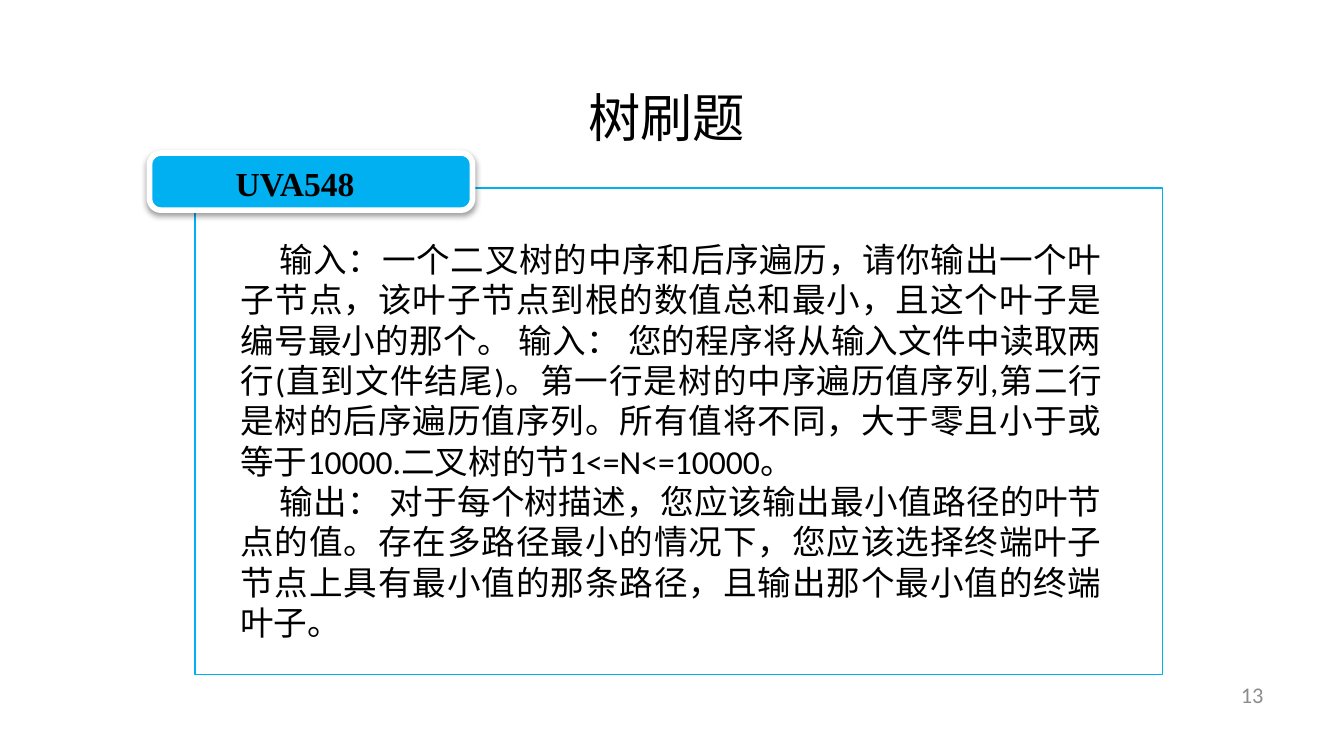
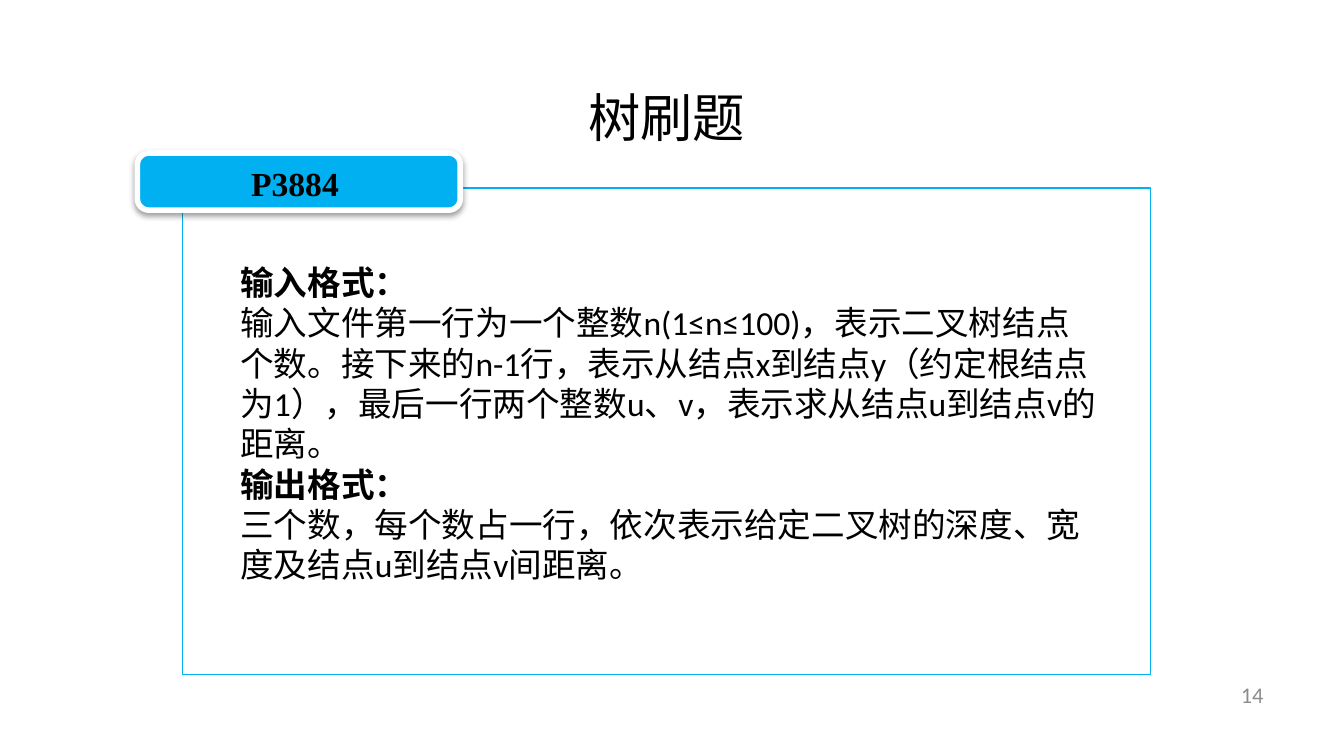
import lxml.etree
import pptx
import pptx.dml.color
import pptx.enum.shapes
import pptx.enum.text
import pptx.oxml.ns
import pptx.util

Pt = pptx.util.Pt
qn = pptx.oxml.ns.qn
ALIGN = pptx.enum.text.PP_ALIGN
ANCHOR = pptx.enum.text.MSO_ANCHOR
FIT = pptx.enum.text.MSO_AUTO_SIZE
SHAPES = pptx.enum.shapes.MSO_SHAPE

COLORS = {"accent": "00B0F0", "paper": "FFFFFF", "ink": "000000", "number": "8C8C8C"}
HAN_FONT = "Noto Sans CJK SC"
STYLES = {
    "title": {"size": Pt(28), "name": HAN_FONT, "bold": False},
    "label": {"size": Pt(18), "name": "Times New Roman", "bold": True},
    "body": {"size": Pt(18), "name": "Calibri", "bold": False},
    "heading": {"size": Pt(18), "name": "Calibri", "bold": True},
    "number": {"size": Pt(12), "name": "Calibri", "bold": False},
}
TITLE_ONLY = 5

PROBLEMS = [
    {
        "label": "UVA548",
        "number": 13,
        "card_left": 104.4,
        "text_top": 124.56,
        "text_height": 225.36,
        "align": ALIGN.JUSTIFY,
        "indent": 20.9,
        "paragraphs": [
            ("body", "输入：一个二叉树的中序和后序遍历，请你输出一个叶子节点，该叶子节点到根的数值总和最小，且这个叶子是编号最小的那个。 输入： 您的程序将从输入文件中读取两行(直到文件结尾)。第一行是树的中序遍历值序列,第二行是树的后序遍历值序列。所有值将不同，大于零且小于或等于10000.二叉树的节1<=N<=10000。"),
            ("body", "输出： 对于每个树描述，您应该输出最小值路径的叶节点的值。存在多路径最小的情况下，您应该选择终端叶子节点上具有最小值的那条路径，且输出那个最小值的终端叶子。"),
        ],
    },
    {
        "label": "P3884",
        "number": 14,
        "card_left": 97.9,
        "text_top": 136.8,
        "text_height": 203.76,
        "align": ALIGN.LEFT,
        "indent": 0,
        "paragraphs": [
            ("heading", "输入格式："),
            ("body", "输入文件第一行为一个整数n(1≤n≤100)，表示二叉树结点个数。接下来的n-1行，表示从结点x到结点y（约定根结点为1），最后一行两个整数u、v，表示求从结点u到结点v的距离。"),
            ("heading", "输出格式："),
            ("body", "三个数，每个数占一行，依次表示给定二叉树的深度、宽度及结点u到结点v间距离。"),
        ],
    },
]


def rgb(color):
    return pptx.dml.color.RGBColor.from_string(COLORS[color])


def add_xml(parent, tag, **attributes):
    return lxml.etree.SubElement(parent, qn(tag), attributes)


class Deck:
    def __init__(self):
        self.presentation = pptx.Presentation()
        self.presentation.slide_width = Pt(720)
        self.presentation.slide_height = Pt(405)
        self.slide = None

    def start_slide(self):
        layout = self.presentation.slide_layouts[TITLE_ONLY]
        self.slide = self.presentation.slides.add_slide(layout)

    def add_run(self, paragraph, text, style, color="ink"):
        run = paragraph.add_run()
        run.text = text
        for name, value in STYLES[style].items():
            setattr(run.font, name, value)
        run.font.color.rgb = rgb(color)
        add_xml(run._r.get_or_add_rPr(), "a:ea", typeface=HAN_FONT)

    def title(self, text):
        heading = self.slide.shapes.title
        place = {"left": 238.3, "top": 30.2, "width": 237.6, "height": 48.2}
        for name, value in place.items():
            setattr(heading, name, Pt(value))
        frame = heading.text_frame
        frame.auto_size = FIT.NONE
        frame.vertical_anchor = ANCHOR.TOP
        frame.paragraphs[0].alignment = ALIGN.CENTER
        frame.paragraphs[0].line_spacing = 1.35
        self.add_run(frame.paragraphs[0], text, "title")

    def text(self, box, paragraphs, align, color="ink", indent=0, anchor=ANCHOR.TOP, fit=FIT.SHAPE_TO_FIT_TEXT):
        frame = self.slide.shapes.add_textbox(*map(Pt, box)).text_frame
        frame.word_wrap = True
        frame.auto_size = fit
        frame.vertical_anchor = anchor
        for index, (style, content) in enumerate(paragraphs):
            paragraph = frame.add_paragraph() if index else frame.paragraphs[0]
            paragraph.alignment = align
            if indent:
                paragraph._p.get_or_add_pPr().set("indent", str(Pt(indent)))
            self.add_run(paragraph, content, style, color)

    def shape(self, preset, box, fill, line, weight):
        shape = self.slide.shapes.add_shape(preset, *map(Pt, box))
        shape.fill.solid()
        shape.fill.fore_color.rgb = rgb(fill)
        shape.line.color.rgb = rgb(line)
        shape.line.width = Pt(weight)
        shape.shadow.inherit = False
        return shape

    def card(self, left):
        frame = self.shape(SHAPES.RECTANGLE, (left, 100.8, 518.4, 260.6), "paper", "accent", 0.75)
        fill_color = frame.element.spPr.find(qn("a:solidFill"))[0]
        add_xml(fill_color, "a:alpha", val="90000")
        tab = self.shape(SHAPES.ROUNDED_RECTANGLE, (left - 24.3, 82, 173, 30.6), "accent", "paper", 3)
        tab.adjustments[0] = 0.2
        effects = tab.element.spPr.find(qn("a:effectLst"))
        shadow = add_xml(effects, "a:outerShdw", blurRad=str(Pt(3.1)), dist=str(Pt(1.6)),
                         dir="5400000", rotWithShape="0")
        shade = add_xml(shadow, "a:srgbClr", val=COLORS["ink"])
        add_xml(shade, "a:alpha", val="38000")

    def page_number(self, number):
        self.text((516, 361.4, 168, 21.6), [("number", str(number))], ALIGN.RIGHT,
                  color="number", anchor=ANCHOR.MIDDLE, fit=FIT.NONE)

    def problem(self, problem):
        self.start_slide()
        self.page_number(problem["number"])
        self.title("树刷题")
        self.card(problem["card_left"])
        self.text((74.9, 83.5, 166.3, 28.8), [("label", problem["label"])], ALIGN.CENTER)
        self.text((121.7, problem["text_top"], 475.9, problem["text_height"]),
                  problem["paragraphs"], problem["align"], indent=problem["indent"])


def main():
    deck = Deck()
    for problem in PROBLEMS:
        deck.problem(problem)
    deck.presentation.save("out.pptx")


if __name__ == "__main__":
    main()
